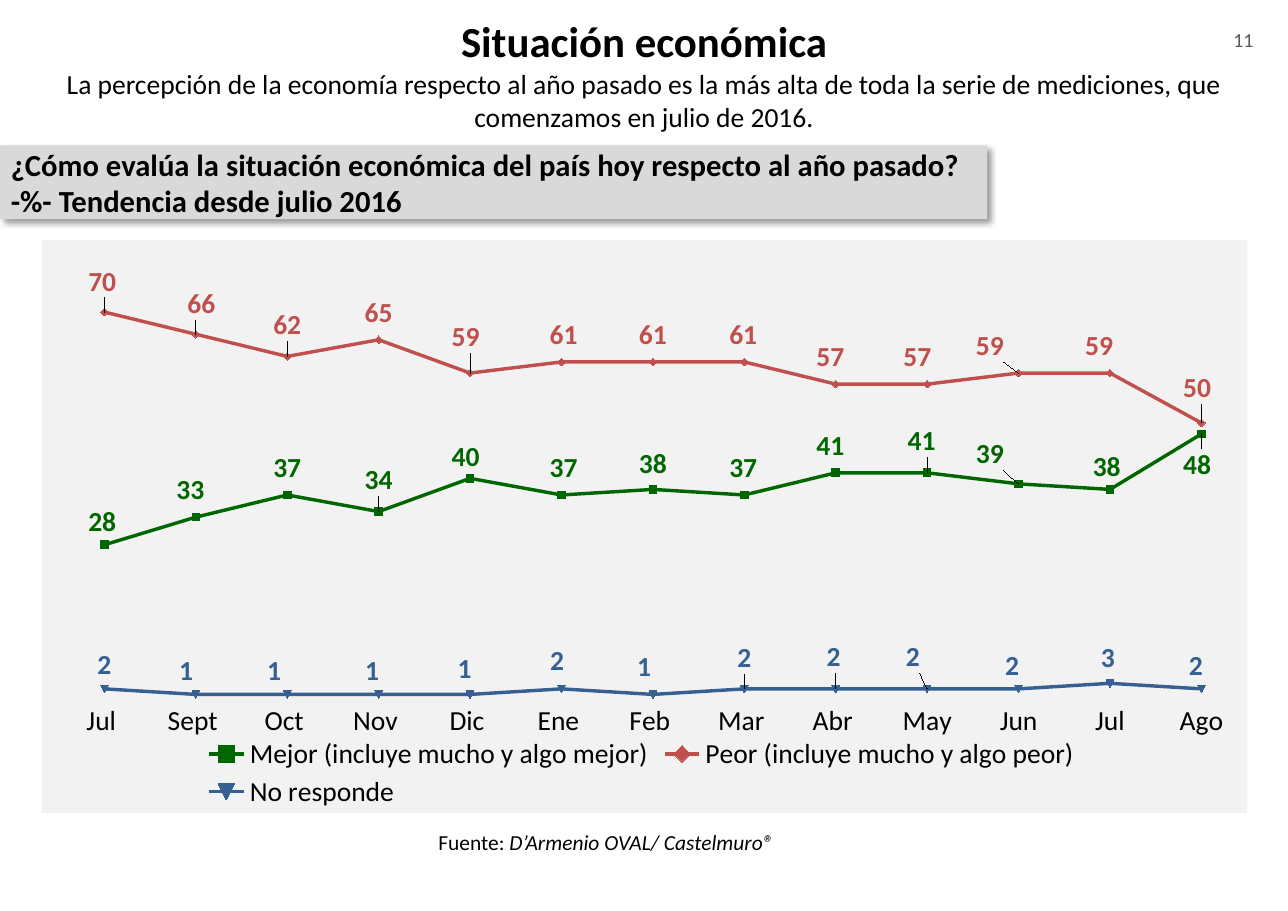
import lxml.etree
import pptx
import pptx.chart.data
import pptx.dml.color
import pptx.enum.chart
import pptx.enum.shapes
import pptx.enum.text
import pptx.oxml
import pptx.oxml.ns
import pptx.util

Inches = pptx.util.Inches
Pt = pptx.util.Pt
ALIGN = pptx.enum.text.PP_ALIGN
ANCHOR = pptx.enum.text.MSO_ANCHOR

CHART_BOX = (0.38, 2.18, 10.94, 5.2)
MONTHS = ["Jul ", "Sept ", "Oct ", "Nov ", "Dic ", "Ene ", "Feb ", "Mar ",
          "Abr ", "May", "Jun", "Jul", "Ago"]
SERIES = [
    ("Mejor (incluye mucho y algo mejor) ", "006600",
     [28, 33, 37, 34, 40, 37, 38, 37, 41, 41, 39, 38, 48],
     [(-2, -21), (-5, -25), (0, -25), (0, -29), (-4, -20), (2, -25), (0, -23),
      (-1, -25), (-5, -25), (-5, -29), (-26, -27), (-3, -21), (-4, 28)]),
    ("Peor (incluye mucho y algo peor) ", "C0504D",
     [70, 66, 62, 65, 59, 61, 61, 61, 57, 57, 59, 59, 50],
     [(-2, -28), (5, -28), (0, -29), (0, -25), (-4, -33), (2, -25), (0, -25),
      (-1, -25), (-5, -25), (-9, -25), (-26, -25), (-10, -25), (-4, -32)]),
    ("No responde ", "376092",
     [2, 1, 1, 1, 1, 2, 1, 2, 2, 2, 2, 3, 2],
     [(0, -22), (-9, -22), (-12, -22), (-6, -22), (-5, -23), (-4, -26), (-8, -25),
      (0, -28), (-2, -29), (-13, -29), (-6, -21), (-2, -23), (-5, -21)]),
]


def color(value):
    return pptx.dml.color.RGBColor.from_string(value)


def apply(target, values):
    for name, value in values.items():
        setattr(target, name, value)


def parse(tag, content):
    namespaces = pptx.oxml.ns.nsdecls("a", "c")
    return pptx.oxml.parse_xml(f"<{tag} {namespaces}>{content}</{tag}>")


def layout(**values):
    content = "".join(f'<c:{name} val="{value}"/>' for name, value in values.items())
    return parse("c:layout", f"<c:manualLayout>{content}</c:manualLayout>")


class SlideBuilder:
    font_name = "Calibri"

    def __init__(self, presentation):
        self.slide = presentation.slides.add_slide(presentation.slide_layouts[5])

    def style(self, font, size, value="000000", **extra):
        apply(font, {"name": self.font_name, "size": Pt(size), **extra})
        font.color.rgb = color(value)

    def fill_text(self, shape, paragraphs, size, value="000000", align=ALIGN.LEFT,
                  anchor=ANCHOR.TOP, wrap=True, bold=False):
        frame = shape.text_frame
        apply(frame, {"word_wrap": wrap, "vertical_anchor": anchor,
                      "auto_size": pptx.enum.text.MSO_AUTO_SIZE.NONE})
        for index, runs in enumerate(paragraphs):
            paragraph = frame.add_paragraph() if index else frame.paragraphs[0]
            paragraph.alignment = align
            for text, italic in runs:
                run = paragraph.add_run()
                run.text = text
                self.style(run.font, size, value, bold=bold, italic=italic)

    def title(self, box, text, size):
        shape = self.slide.shapes.title
        apply(shape, dict(zip(("left", "top", "width", "height"), map(Inches, box))))
        self.fill_text(shape, [[(text, False)]], size, align=ALIGN.CENTER,
                       anchor=ANCHOR.MIDDLE, bold=True)

    def text(self, box, runs, size, **options):
        shape = self.slide.shapes.add_textbox(*map(Inches, box))
        self.fill_text(shape, [runs], size, **options)

    def banner(self, box, lines, size):
        shape = self.slide.shapes.add_shape(
            pptx.enum.shapes.MSO_SHAPE.RECTANGLE, *map(Inches, box))
        shape.fill.solid()
        shape.fill.fore_color.rgb = color("D9D9D9")
        shape.line.fill.background()
        shape._element.spPr.append(parse(
            "a:effectLst",
            f'<a:outerShdw blurRad="{Pt(4)}" dist="{Pt(3)}" dir="2700000" algn="tl">'
            '<a:srgbClr val="000000"><a:alpha val="40000"/></a:srgbClr></a:outerShdw>'))
        self.fill_text(shape, [[(line, False)] for line in lines], size,
                       anchor=ANCHOR.MIDDLE, bold=True)

    def line_chart(self, box, categories, series_list, size):
        data = pptx.chart.data.CategoryChartData()
        data.categories = categories
        for name, _, values, _ in series_list:
            data.add_series(name, values)
        chart = self.slide.shapes.add_chart(
            pptx.enum.chart.XL_CHART_TYPE.LINE_MARKERS, *map(Inches, box), data).chart
        self.style(chart.font, size)
        apply(chart, {"has_title": False, "has_legend": True})
        apply(chart.legend, {"position": pptx.enum.chart.XL_LEGEND_POSITION.BOTTOM,
                             "include_in_layout": False})
        self.style(chart.legend.font, size)
        apply(chart.value_axis, {"visible": False, "has_major_gridlines": False,
                                 "minimum_scale": 0, "maximum_scale": 80})
        no_tick = pptx.enum.chart.XL_TICK_MARK.NONE
        apply(chart.category_axis, {"major_tick_mark": no_tick, "minor_tick_mark": no_tick})
        chart.category_axis.format.line.fill.background()
        self.style(chart.category_axis.tick_labels.font, size)
        chart.plots[0].vary_by_categories = False
        for series, (_, value, _, shifts) in zip(chart.plots[0].series, series_list):
            self.format_series(series, value, shifts, box, size)
        self.format_chart_area(chart)

    def format_series(self, series, value, shifts, box, size):
        series.smooth = False
        series.format.line.width = Pt(2.25)
        series.format.line.color.rgb = color(value)
        apply(series.marker, {"style": pptx.enum.chart.XL_MARKER_STYLE.AUTOMATIC, "size": 5})
        series.marker.format.fill.solid()
        series.marker.format.fill.fore_color.rgb = color(value)
        series.marker.format.line.color.rgb = color(value)
        center = pptx.enum.chart.XL_LABEL_POSITION.CENTER
        labels = series.data_labels
        apply(labels, {"show_value": True, "position": center})
        self.style(labels.font, size, value, bold=True)
        for index in range(len(shifts)):
            label = series.points[index].data_label
            label.position = center
            self.style(label.font, size, value, bold=True)
        elements = series._element.findall(".//" + pptx.oxml.ns.qn("c:dLbl"))
        for element, (right, down) in zip(elements, shifts):
            element.find(pptx.oxml.ns.qn("c:idx")).addnext(
                layout(x=round(right / 100 / box[2], 4), y=round(down / 100 / box[3], 4)))

    def format_chart_area(self, chart):
        qn = pptx.oxml.ns.qn
        root = chart._chartSpace
        plot_area = root.find(".//" + qn("c:plotArea"))
        for old in plot_area.findall(qn("c:layout")):
            plot_area.remove(old)
        plot_area.insert(0, layout(layoutTarget="inner", xMode="edge", yMode="edge",
                                   x=0.014, y=0.029, w=0.986, h=0.774))
        legend = root.find(".//" + qn("c:legend"))
        for old in legend.findall(qn("c:layout")):
            legend.remove(old)
        legend.find(qn("c:legendPos")).addnext(
            layout(xMode="edge", yMode="edge", x=0.13, y=0.86, w=0.74, h=0.14))
        root.find(qn("c:chart")).addnext(parse(
            "c:spPr", '<a:solidFill><a:srgbClr val="F2F2F2"/></a:solidFill>'
                      "<a:ln><a:noFill/></a:ln>"))


def main():
    presentation = pptx.Presentation()
    apply(presentation, {"slide_width": Inches(11.69), "slide_height": Inches(8.27)})
    builder = SlideBuilder(presentation)
    builder.title((0, -0.1, 11.69, 0.94), "Situación económica", 28)
    builder.text((0, 0.56, 11.69, 1.01), [(
        "La percepción de la economía respecto al año pasado es la más alta de toda la "
        "serie de mediciones, que comenzamos en julio de 2016.", False)],
        18, align=ALIGN.CENTER)
    builder.banner((0, 1.32, 8.96, 0.67), [
        "¿Cómo evalúa la situación económica del país hoy respecto al año pasado?",
        "-%- Tendencia desde julio 2016"], 20)
    builder.line_chart(CHART_BOX, MONTHS, SERIES, 18)
    builder.text((3.88, 7.48, 3.13, 0.34),
                 [("Fuente: ", False), ("D’Armenio OVAL/ Castelmuro®", True)],
                 14, wrap=False)
    builder.text((10.84, 0.2, 0.89, 0.44), [("11", False)], 13,
                 value="595959", align=ALIGN.CENTER)
    presentation.save("out.pptx")


if __name__ == "__main__":
    main()
